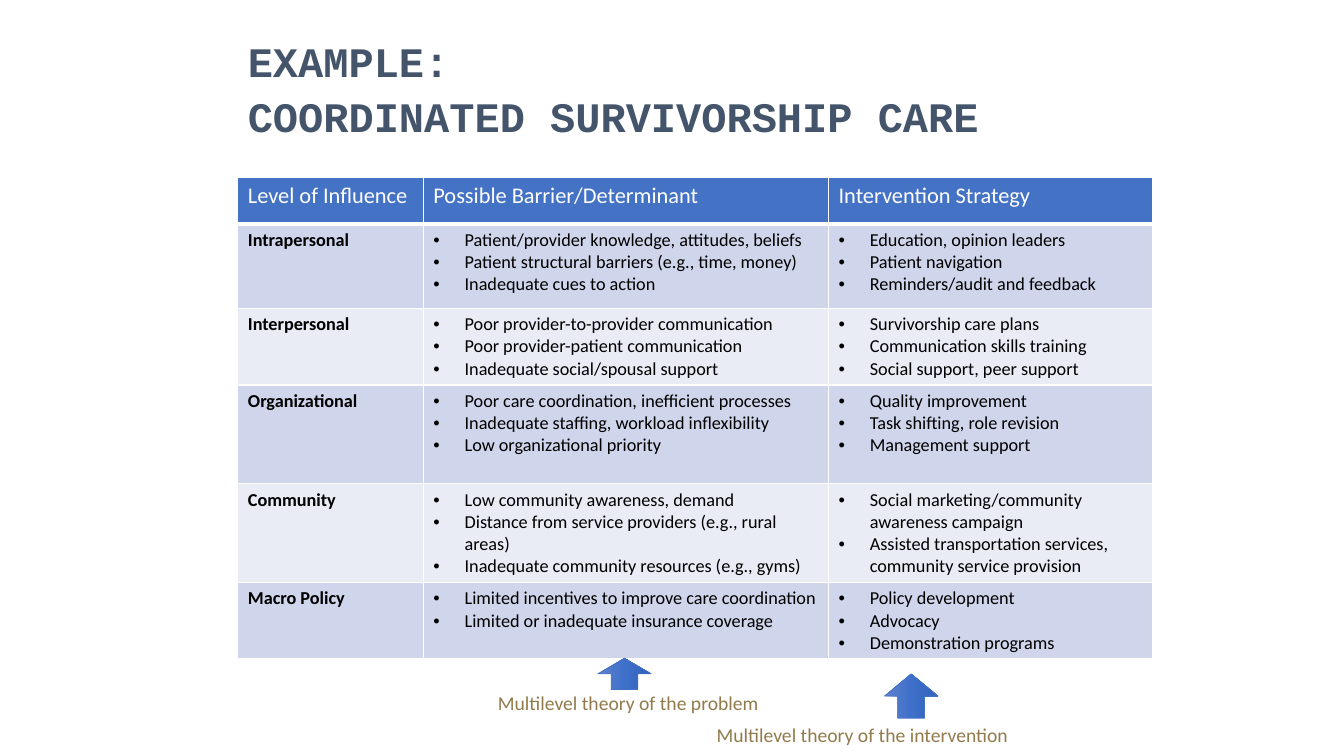
from copy import deepcopy
from dataclasses import dataclass

from lxml.etree import SubElement
from pptx import Presentation
from pptx.dml.color import RGBColor
from pptx.enum.shapes import MSO_SHAPE as Preset
from pptx.enum.text import MSO_ANCHOR as Anchor, MSO_AUTO_SIZE as AutoSize
from pptx.oxml.ns import qn
from pptx.util import Inches, Pt

SLIDE_WIDTH, SLIDE_HEIGHT = Inches(13.33), Inches(7.5)
BODY_FONT, TITLE_FONT = "Calibri", "Courier New"
WHITE, BLACK, BLUE, SLATE, GOLD = "FFFFFF", "000000", "4472C4", "44546A", "917B4C"
BANDS = ("CFD5EA", "E9EBF5")
ARROW_GRADIENT = ("6183CB", "3E70CA", "3062BB")
BULLET_INDENT = Inches(0.31)


@dataclass(frozen=True)
class Box:
    """A rectangle in percent of the slide's width and height."""
    left: float
    top: float
    width: float
    height: float

    def lengths(self) -> tuple[int, int, int, int]:
        return (across(self.left), down(self.top), across(self.width), down(self.height))


@dataclass(frozen=True)
class Level:
    name: str
    height: float
    barriers: tuple[str, ...]
    strategies: tuple[str, ...]


@dataclass(frozen=True)
class Theory:
    """A caption under the table and the arrow that points up from it."""
    caption: str
    caption_box: Box
    arrow_box: Box


TITLE_BOX = Box(17.7, 4.8, 69.75, 14.4)
TITLE = ("EXAMPLE:", "COORDINATED SURVIVORSHIP CARE")
TABLE_LEFT, TABLE_TOP = 17.7, 23.47
COLUMN_WIDTHS = (13.8, 30.15, 24.08)
HEADER_HEIGHT = 6.13
HEADERS = ("Level of Influence", "Possible Barrier/Determinant", "Intervention Strategy")
LEVELS = (
    Level("Intrapersonal", 11.2,
          ("Patient/provider knowledge, attitudes, beliefs",
           "Patient structural barriers (e.g., time, money)",
           "Inadequate cues to action"),
          ("Education, opinion leaders", "Patient navigation", "Reminders/audit and feedback")),
    Level("Interpersonal", 10.13,
          ("Poor provider-to-provider communication",
           "Poor provider-patient communication",
           "Inadequate social/spousal support"),
          ("Survivorship care plans", "Communication skills training",
           "Social support, peer support")),
    Level("Organizational", 13.07,
          ("Poor care coordination, inefficient processes",
           "Inadequate staffing, workload inflexibility",
           "Low organizational priority"),
          ("Quality improvement", "Task shifting, role revision", "Management support")),
    Level("Community", 13.07,
          ("Low community awareness, demand",
           "Distance from service providers (e.g., rural areas)",
           "Inadequate community resources (e.g., gyms)"),
          ("Social marketing/community awareness campaign",
           "Assisted transportation services, community service provision")),
    Level("Macro Policy", 10.13,
          ("Limited incentives to improve care coordination",
           "Limited or inadequate insurance coverage"),
          ("Policy development", "Advocacy", "Demonstration programs")),
)
THEORIES = (
    Theory("Multilevel theory of the problem",
           Box(36.3, 90.8, 21, 4.53), Box(45.3, 85.6, 2.33, 7.07)),
    Theory("Multilevel theory of the intervention",
           Box(52.58, 94.93, 23.33, 4.53), Box(66.15, 88.53, 3.3, 7.07)),
)


def across(percent: float) -> int:
    return round(SLIDE_WIDTH * percent / 100)


def down(percent: float) -> int:
    return round(SLIDE_HEIGHT * percent / 100)


def color(value: str) -> RGBColor:
    return RGBColor.from_string(value)


def write(frame, lines: tuple[str, ...], size: float, ink: str, bold: bool = False,
          font: str = BODY_FONT, bulleted: bool = False) -> None:
    """Fill a text frame with one paragraph per line, all in one font."""
    for index, line in enumerate(lines):
        paragraph = frame.paragraphs[0] if index == 0 else frame.add_paragraph()
        paragraph.text = line
        if bulleted:
            properties = paragraph._p.get_or_add_pPr()
            properties.set("marL", str(BULLET_INDENT))
            properties.set("indent", str(-BULLET_INDENT))
            SubElement(properties, qn("a:buFont"), typeface="Arial")
            SubElement(properties, qn("a:buChar"), char="•")
        paragraph.font.name = font
        paragraph.font.size = Pt(size)
        paragraph.font.bold = bold
        paragraph.font.color.rgb = color(ink)


def paint_cell(cell, fill: str, bottom_width: float = 1) -> None:
    """Give a cell white borders and a solid fill."""
    properties = cell._tc.get_or_add_tcPr()
    for side, width in (("L", 1), ("R", 1), ("T", 1), ("B", bottom_width)):
        border = SubElement(properties, qn(f"a:ln{side}"), w=str(Pt(width)))
        solid = SubElement(border, qn("a:solidFill"))
        SubElement(solid, qn("a:srgbClr"), val=WHITE)
    cell.fill.solid()
    cell.fill.fore_color.rgb = color(fill)


def add_title(slide) -> None:
    frame = slide.shapes.add_textbox(*TITLE_BOX.lengths()).text_frame
    frame.word_wrap = True
    frame.vertical_anchor = Anchor.BOTTOM
    write(frame, TITLE, 30, SLATE, bold=True, font=TITLE_FONT)
    for paragraph in frame.paragraphs:
        paragraph.line_spacing = 0.8
    frame.paragraphs[1].space_before = Pt(10)


def add_level_table(slide) -> None:
    heights = (HEADER_HEIGHT, *(level.height for level in LEVELS))
    box = Box(TABLE_LEFT, TABLE_TOP, sum(COLUMN_WIDTHS), sum(heights))
    table = slide.shapes.add_table(len(heights), len(COLUMN_WIDTHS), *box.lengths()).table
    table.first_row = table.horz_banding = False
    for column, width in zip(table.columns, COLUMN_WIDTHS):
        column.width = across(width)
    for row, height in zip(table.rows, heights):
        row.height = down(height)

    for cell, header in zip(table.rows[0].cells, HEADERS):
        paint_cell(cell, BLUE, bottom_width=3)
        write(cell.text_frame, (header,), 16, WHITE)
    for index, level in enumerate(LEVELS):
        contents = ((level.name,), level.barriers, level.strategies)
        for column, lines in enumerate(contents):
            cell = table.cell(index + 1, column)
            paint_cell(cell, BANDS[index % 2])
            write(cell.text_frame, lines, 13, BLACK, bold=column == 0, bulleted=column > 0)


def add_caption(slide, theory: Theory) -> None:
    frame = slide.shapes.add_textbox(*theory.caption_box.lengths()).text_frame
    frame.word_wrap = False
    frame.auto_size = AutoSize.SHAPE_TO_FIT_TEXT
    write(frame, (theory.caption,), 14, GOLD)


def add_up_arrow(slide, box: Box) -> None:
    arrow = slide.shapes.add_shape(Preset.RIGHT_ARROW, *box.lengths())
    arrow.rotation = 270
    arrow.shadow.inherit = False
    arrow.line.color.rgb = color(BLUE)
    arrow.line.width = Pt(0.5)
    arrow.fill.gradient()
    arrow.fill.gradient_angle = 270
    stops = arrow._element.spPr.find(qn("a:gradFill")).find(qn("a:gsLst"))
    middle = deepcopy(stops[0])
    middle.set("pos", "50000")
    stops.insert(1, middle)
    for stop, value in zip(arrow.fill.gradient_stops, ARROW_GRADIENT):
        stop.color.rgb = color(value)


def main() -> None:
    presentation = Presentation()
    presentation.slide_width, presentation.slide_height = SLIDE_WIDTH, SLIDE_HEIGHT
    slide = presentation.slides.add_slide(presentation.slide_layouts[6])
    add_title(slide)
    add_level_table(slide)
    for theory in THEORIES:
        add_caption(slide, theory)
        add_up_arrow(slide, theory.arrow_box)
    presentation.save("out.pptx")


if __name__ == "__main__":
    main()
